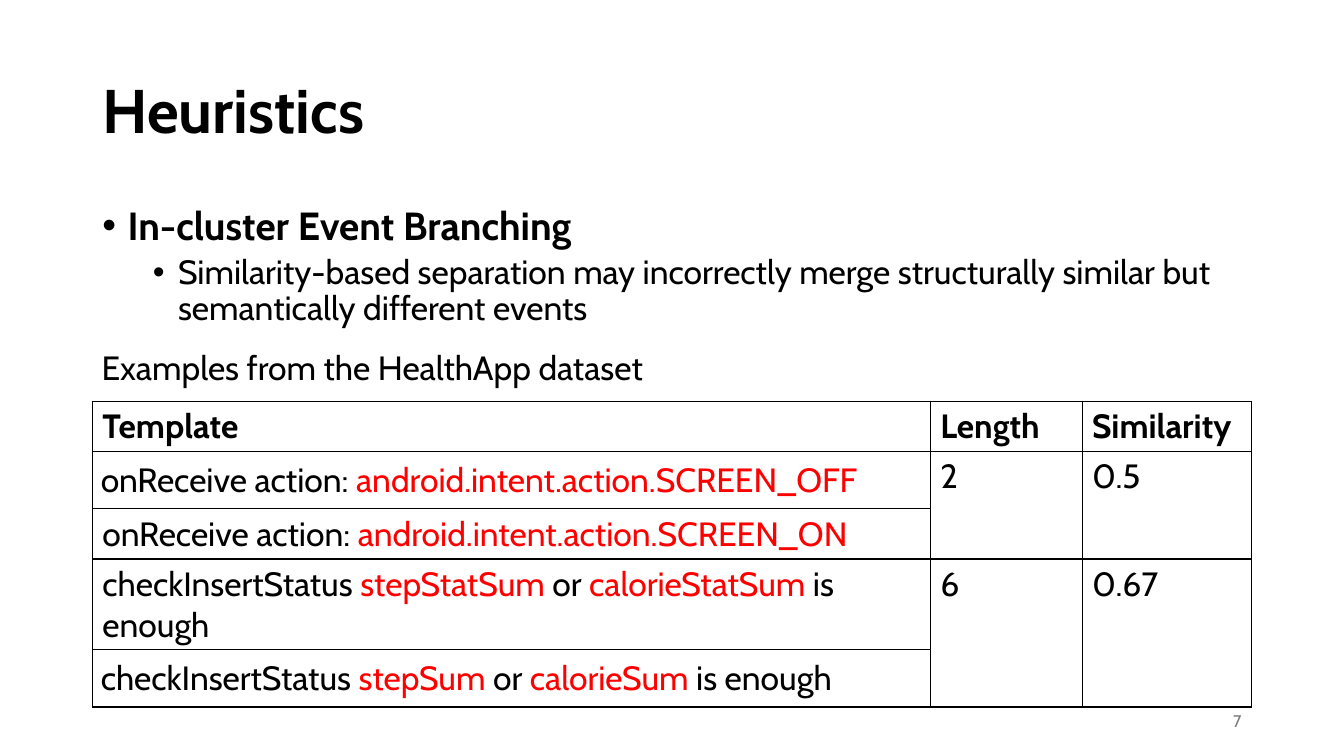
"""Build the Heuristics slide: bullets and a table of similar event templates."""
from lxml import etree
from pptx import Presentation
from pptx.dml.color import RGBColor
from pptx.enum import text
from pptx.oxml import ns
from pptx.util import Pt

FONT, BLACK, RED, GRAY = "Cabin", "000000", "FF0000", "797979"
TITLE = "Heuristics"
BULLETS = [
    ("In-cluster Event Branching", 28, True, 0, 18),
    ("Similarity-based separation may incorrectly merge structurally similar but "
     "semantically different events", 24, False, 5, 54),
]
CAPTION = "Examples from the HealthApp dataset"
PAGE = "7"
HEADER = ("Template", "Length", "Similarity")
PAIRS = [
    (("onReceive action: ", "android.intent.action.SCREEN_OFF"),
     ("onReceive action: ", "android.intent.action.SCREEN_ON"), "2", "0.5"),
    (("checkInsertStatus ", "stepStatSum", " or ", "calorieStatSum", " is enough"),
     ("checkInsertStatus ", "stepSum", " or ", "calorieSum", " is enough"), "6", "0.67"),
]
PADDED_ROWS = (1, 4)
COLUMNS = (598.5, 108.5, 121)
ROW_HEIGHT = 29.5
LEFT, WIDTH = 66, 828


def color(value):
    return RGBColor.from_string(value)


def set_font(paragraph, size, bold=False, shade=BLACK):
    font = paragraph.font
    font.name, font.size, font.bold = FONT, Pt(size), bold
    font.color.rgb = color(shade)


def place(shape, left, top, width, height):
    shape.left, shape.top, shape.width, shape.height = map(Pt, (left, top, width, height))


def add_bullet(paragraph, margin):
    properties = paragraph._p.get_or_add_pPr()
    properties.set("marL", str(Pt(margin)))
    properties.set("indent", str(Pt(-18)))
    etree.SubElement(properties, ns.qn("a:buFont"), typeface="Arial")
    etree.SubElement(properties, ns.qn("a:buChar"), char="•")


def add_label(slide, words, box, size, shade, wrap):
    shape = slide.shapes.add_textbox(*map(Pt, box))
    shape.text_frame.word_wrap = wrap
    paragraph = shape.text_frame.paragraphs[0]
    paragraph.text = words
    set_font(paragraph, size, shade=shade)
    return shape.text_frame


def add_borders(cell):
    properties = cell._tc.get_or_add_tcPr()
    for index, side in enumerate(("lnL", "lnR", "lnT", "lnB")):
        line = etree.Element(ns.qn("a:" + side), w=str(Pt(1)))
        fill = etree.SubElement(line, ns.qn("a:solidFill"))
        etree.SubElement(fill, ns.qn("a:srgbClr"), val=BLACK)
        properties.insert(index, line)


def fill_cell(cell, parts, bold=False):
    paragraph = cell.text_frame.paragraphs[0]
    for index, words in enumerate(parts):
        run = paragraph.add_run()
        run.text = words
        if index % 2:
            run.font.color.rgb = color(RED)
    set_font(paragraph, 24, bold)


def add_table(slide):
    frame = slide.shapes.add_table(5, 3, Pt(LEFT), Pt(286.5), Pt(WIDTH), Pt(5 * ROW_HEIGHT))
    table = frame.table
    table.first_row = table.horz_banding = False
    for column, width in zip(table.columns, COLUMNS):
        column.width = Pt(width)
    for row in table.rows:
        row.height = Pt(ROW_HEIGHT)
    for cell in table.iter_cells():
        cell.fill.background()
        add_borders(cell)
    for column, words in enumerate(HEADER):
        fill_cell(table.cell(0, column), [words], True)
    for pair, (first, second, *values) in enumerate(PAIRS):
        top = 1 + 2 * pair
        fill_cell(table.cell(top, 0), first)
        fill_cell(table.cell(top + 1, 0), second)
        for column, value in enumerate(values, 1):
            table.cell(top, column).merge(table.cell(top + 1, column))
            fill_cell(table.cell(top, column), [value])
    for row in PADDED_ROWS:
        cell = table.cell(row, 0)
        cell.vertical_anchor = text.MSO_ANCHOR.MIDDLE
        cell.margin_left = cell.margin_right = cell.margin_top = cell.margin_bottom = Pt(6)


def main():
    presentation = Presentation()
    presentation.slide_width, presentation.slide_height = Pt(960), Pt(540)
    slide = presentation.slides.add_slide(presentation.slide_layouts[1])

    title, body = slide.placeholders
    place(title, LEFT, 28.75, WIDTH, 104.4)
    title.text_frame.text = TITLE
    title.text_frame.vertical_anchor = text.MSO_ANCHOR.MIDDLE
    heading = title.text_frame.paragraphs[0]
    heading.alignment, heading.line_spacing = text.PP_ALIGN.LEFT, 0.9
    set_font(heading, 44, True)

    place(body, LEFT, 143.75, WIDTH, 342.6)
    body.text_frame.text = "\n".join(bullet[0] for bullet in BULLETS)
    body.text_frame.auto_size = text.MSO_AUTO_SIZE.NONE
    for level, (paragraph, bullet) in enumerate(zip(body.text_frame.paragraphs, BULLETS)):
        _, size, bold, before, margin = bullet
        paragraph.level, paragraph.line_spacing = level, 0.9
        paragraph.space_before = Pt(before)
        add_bullet(paragraph, margin)
        set_font(paragraph, size, bold)

    number = add_label(slide, PAGE, (678, 500.5, 216, 28.75), 12, GRAY, True)
    number.vertical_anchor = text.MSO_ANCHOR.MIDDLE
    number.paragraphs[0].alignment = text.PP_ALIGN.RIGHT
    add_table(slide)
    caption = add_label(slide, CAPTION, (65.5, 244, 410.5, 36), 24, BLACK, False)
    caption.auto_size = text.MSO_AUTO_SIZE.SHAPE_TO_FIT_TEXT
    presentation.save("out.pptx")


if __name__ == "__main__":
    main()
